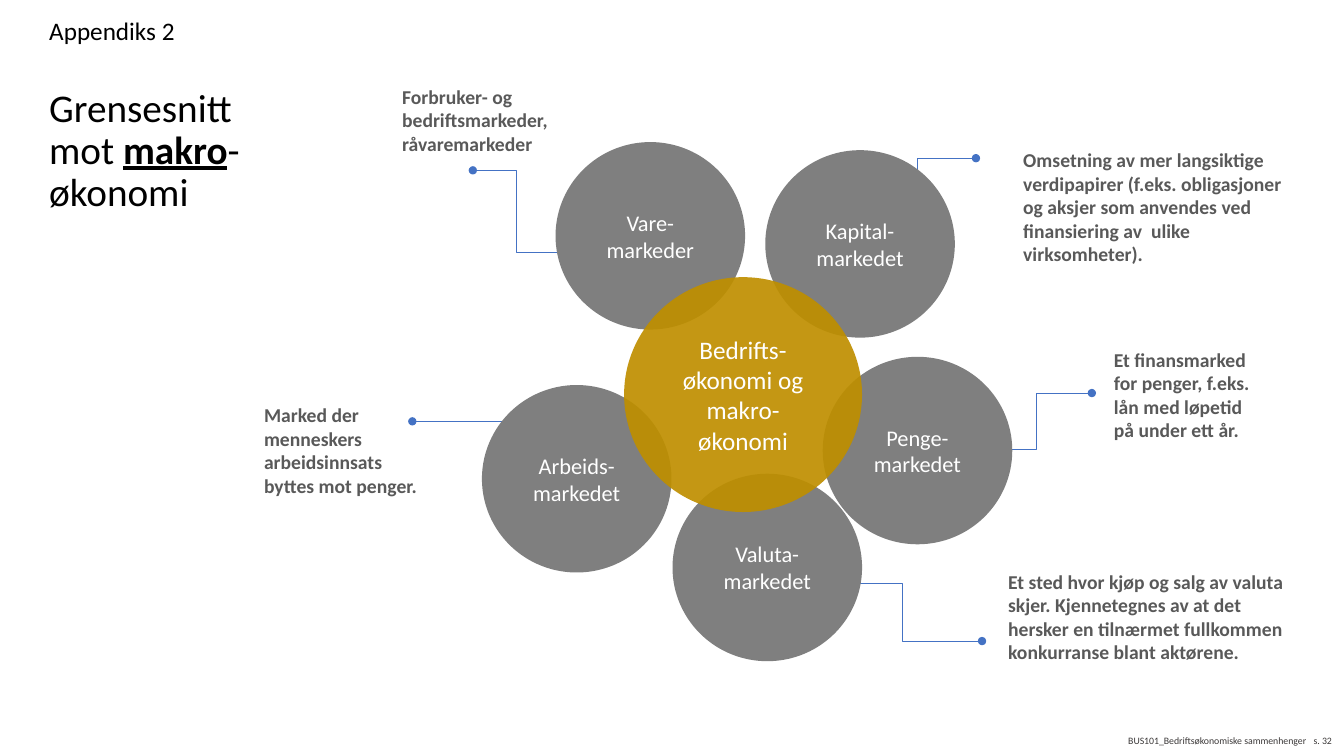
from lxml.etree import SubElement
from pptx import Presentation
from pptx.dml.color import RGBColor
from pptx.enum.shapes import MSO_CONNECTOR as CONN, MSO_SHAPE as SHAPE
from pptx.enum.text import MSO_ANCHOR as ANCHOR, MSO_AUTO_SIZE as AUTO, PP_ALIGN as ALIGN
from pptx.oxml.ns import qn
from pptx.util import Pt

PX = 9144


def rgb(value):
    return RGBColor.from_string(value)


class Page:
    font = "Calibri"
    black = "000000"
    white = "FFFFFF"
    label = "595959"
    footer = "3B3838"
    line = "4472C4"
    grey = "7F7F7F"
    gold = "BF8F00"

    def __init__(self, prs):
        self.s = prs.slides.add_slide(prs.slide_layouts[6])

    def style(self, p, size, color, bold=False):
        for r in p.runs:
            r.font.name = self.font
            r.font.size = Pt(size)
            r.font.bold = bold
            r.font.color.rgb = rgb(color)

    def text(self, x, y, w, h, text, size, color, bold=False):
        sp = self.s.shapes.add_textbox(x * PX, y * PX, w * PX, h * PX)
        tf = sp.text_frame
        tf.word_wrap = True
        tf.text = text
        self.style(tf.paragraphs[0], size, color, bold)
        return tf

    def title(self, x, y, w, h, parts, key):
        tf = self.text(x, y, w, h, "", 28, self.black)
        tf.vertical_anchor = ANCHOR.MIDDLE
        p = tf.paragraphs[0]
        p.line_spacing = 0.9
        for part in parts:
            p.add_run().text = part
        self.style(p, 28, self.black)
        p.runs[key].font.bold = True
        p.runs[key].font.underline = True

    def note(self, x, y, w, h, text, size=14, color=label, bold=True):
        self.text(x, y, w, h, text, size, color, bold).auto_size = AUTO.SHAPE_TO_FIT_TEXT

    def foot(self, x, y, w, h, text, align=ALIGN.LEFT):
        tf = self.text(x, y, w, h, text, 7, self.footer)
        tf.margin_left = tf.margin_right = tf.margin_top = tf.margin_bottom = 0
        tf.vertical_anchor = ANCHOR.MIDDLE
        tf.paragraphs[0].alignment = align

    def circle(self, x, y, w, h, text, size=16, color=grey, alpha=100):
        sp = self.s.shapes.add_shape(SHAPE.OVAL, x * PX, y * PX, w * PX, h * PX)
        sp.shadow.inherit = False
        sp.fill.solid()
        sp.fill.fore_color.rgb = rgb(color)
        sp.line.fill.background()
        if alpha < 100:
            clr = sp._element.spPr.find(qn("a:solidFill"))[0]
            SubElement(clr, qn("a:alpha"), val=str(alpha * 1000))
        tf = sp.text_frame
        tf.word_wrap = True
        tf.vertical_anchor = ANCHOR.MIDDLE
        tf.text = text
        tf.paragraphs[0].alignment = ALIGN.CENTER
        self.style(tf.paragraphs[0], size, self.white)

    def leader(self, x1, y1, x2, y2, bend=0.5):
        c = self.s.shapes.add_connector(CONN.ELBOW, x1 * PX, y1 * PX, x2 * PX, y2 * PX)
        c.line.color.rgb = rgb(self.line)
        c.line.width = Pt(0.5)
        spPr = c._element.spPr
        guides = spPr.find(qn("a:prstGeom")).find(qn("a:avLst"))
        SubElement(guides, qn("a:gd"), name="adj1", fmla=f"val {round(bend * 100000)}")
        SubElement(spPr.find(qn("a:ln")), qn("a:tailEnd"), type="oval")
        SubElement(spPr, qn("a:effectLst"))


LEADERS = [
    (619, 250, 469, 169, 0.71),
    (596, 486, 409, 418),
    (816, 579, 974, 636),
    (930, 446, 1083, 390, 0.64),
    (852, 261, 968, 157),
]
MARKETS = [
    (816, 354, "Penge-markedet"),
    (551, 141, "Vare-markeder"),
    (759, 149, "Kapital-markedet"),
    (478, 382, "Arbeids-markedet"),
    (667, 470, "Valuta-markedet"),
]
NOTES = [
    (252, 395, 188, 104, "Marked der menneskers arbeidsinnsats byttes mot penger."),
    (1095, 340, 163, 104, "Et finansmarked for penger, f.eks. lån med løpetid på under ett år."),
    (389, 79, 166, 81, "Forbruker- og bedriftsmarkeder, råvaremarkeder"),
    (1005, 142, 290, 128, "Omsetning av mer langsiktige verdipapirer (f.eks. obligasjoner "
     "og aksjer som anvendes ved finansiering av  ulike virksomheter)."),
    (990, 560, 305, 104, "Et sted hvor kjøp og salg av valuta skjer. Kjennetegnes av at det "
     "hersker en tilnærmet fullkommen konkurranse blant aktørene."),
]


def main():
    prs = Presentation()
    prs.slide_width = 1333 * PX
    prs.slide_height = 750 * PX
    page = Page(prs)
    page.title(39, 63, 213, 175, ["Grensesnitt mot ", "makro", "-økonomi"], 1)
    for leader in LEADERS:
        page.leader(*leader)
    for x, y, name in MARKETS:
        page.circle(x, y, 188, 186, name)
    page.circle(619, 275, 236, 233, "Bedrifts-økonomi og makro-økonomi", 18, page.gold, 92)
    for note in NOTES:
        page.note(*note)
    page.foot(1119, 722, 214, 26, "BUS101_Bedriftsøkonomiske sammenhenger")
    page.foot(1295, 722, 26, 25, "s. 32", ALIGN.RIGHT)
    page.note(39, 10, 667, 40, "Appendiks 2", 18, page.black, False)
    prs.save("out.pptx")


if __name__ == "__main__":
    main()
